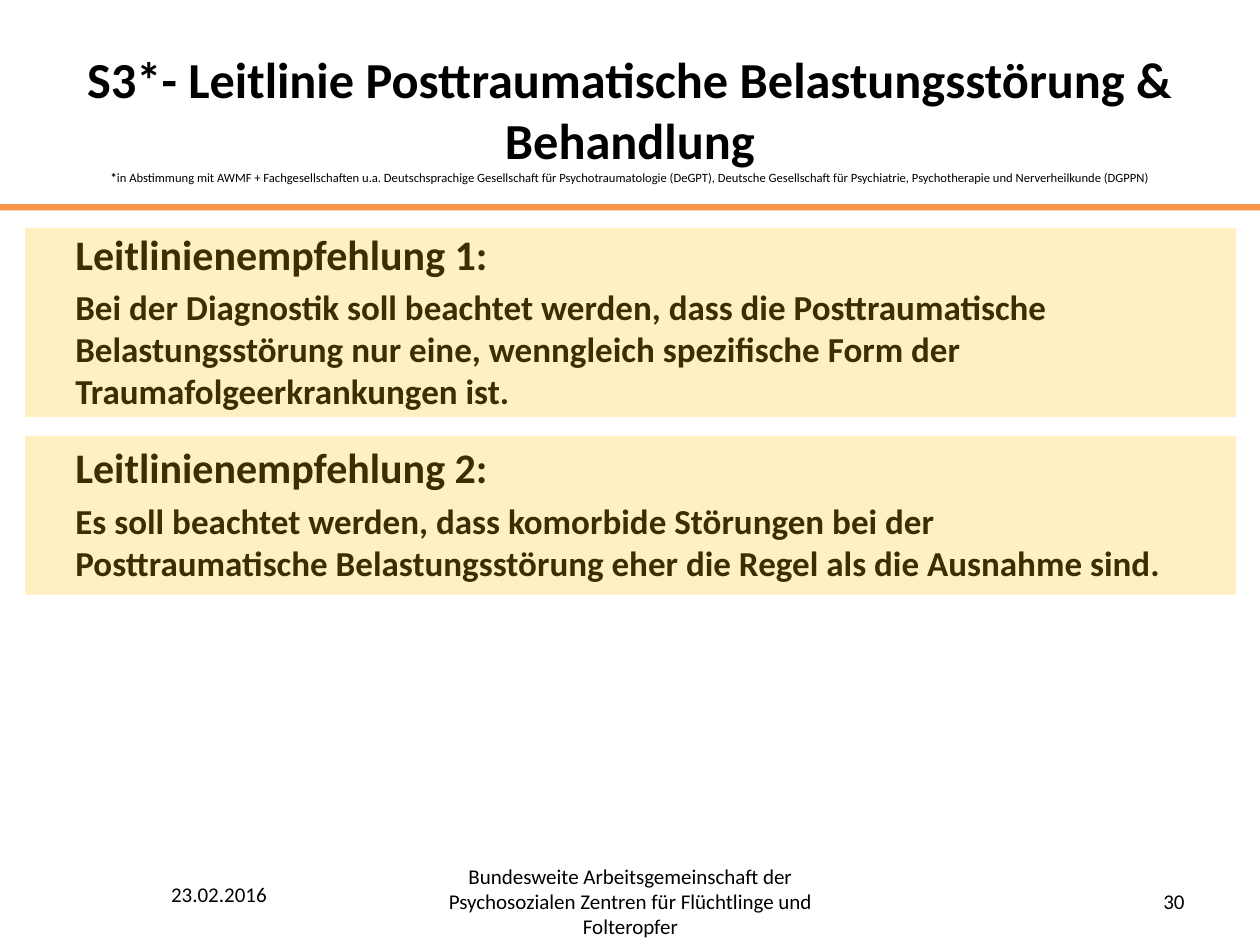
from lxml import etree
from pptx import Presentation
from pptx.dml.color import RGBColor
from pptx.enum.shapes import MSO_SHAPE
from pptx.enum.text import MSO_ANCHOR, MSO_AUTO_SIZE, PP_ALIGN
from pptx.oxml.ns import qn
from pptx.util import Pt

RECT = MSO_SHAPE.RECTANGLE
LEFT, CENTER, RIGHT = PP_ALIGN.LEFT, PP_ALIGN.CENTER, PP_ALIGN.RIGHT
TOP, MIDDLE = MSO_ANCHOR.TOP, MSO_ANCHOR.MIDDLE
NO_FIT = MSO_AUTO_SIZE.NONE

BLACK = RGBColor(0x00, 0x00, 0x00)
ORANGE = RGBColor(0xF7, 0x96, 0x46)
AMBER = RGBColor(0xFF, 0xC0, 0x00)
FONT = "Calibri"
TITLE_ONLY = 5

TITLE = "S3*- Leitlinie Posttraumatische Belastungsstörung & Behandlung"
NOTE = ("in Abstimmung mit AWMF + Fachgesellschaften u.a. Deutschsprachige "
        "Gesellschaft für Psychotraumatologie (DeGPT), Deutsche Gesellschaft "
        "für Psychiatrie, Psychotherapie und Nerverheilkunde (DGPPN)")
ADVICE = [
    ("Leitlinienempfehlung 1:",
     "Bei der Diagnostik soll beachtet werden, dass die Posttraumatische "
     "Belastungsstörung nur eine, wenngleich spezifische Form der "
     "Traumafolgeerkrankungen ist."),
    ("Leitlinienempfehlung 2:",
     "Es soll beachtet werden, dass komorbide Störungen bei der "
     "Posttraumatische Belastungsstörung eher die Regel als die Ausnahme sind."),
]
GROUP = ("Bundesweite Arbeitsgemeinschaft der Psychosozialen Zentren "
         "für Flüchtlinge und Folteropfer")


def write(para, text, size=12, bold=False, align=LEFT, before=0):
    """Add a run to the paragraph and format both."""
    para.alignment = align
    para.space_before = Pt(before)
    run = para.add_run()
    run.text = text
    font = run.font
    font.name, font.size, font.bold = FONT, Pt(size), bold
    font.color.rgb = BLACK


def add_rect(slide, left, top, width, height, color, alpha=None):
    """Add a plain rectangle; alpha is its opacity in percent."""
    rect = slide.shapes.add_shape(RECT, Pt(left), Pt(top), Pt(width), Pt(height))
    rect.shadow.inherit = False
    rect.line.fill.background()
    rect.fill.solid()
    rect.fill.fore_color.rgb = color
    if alpha is not None:
        tone = rect.fill._xPr.find(".//" + qn("a:srgbClr"))
        etree.SubElement(tone, qn("a:alpha"), val=str(alpha * 1000))


def add_box(slide, left, top, width, height, anchor=TOP):
    box = slide.shapes.add_textbox(Pt(left), Pt(top), Pt(width), Pt(height))
    frame = box.text_frame
    frame.word_wrap = True
    frame.vertical_anchor = anchor
    return frame


def set_title(slide):
    title = slide.shapes.title
    title.left, title.top = Pt(36), Pt(21.6)
    title.width, title.height = Pt(648), Pt(90)
    frame = title.text_frame
    frame.auto_size = NO_FIT
    frame.vertical_anchor = MIDDLE
    para = frame.paragraphs[0]
    write(para, TITLE, size=28.8, bold=True, align=CENTER)
    para.add_line_break()
    write(para, "*", size=7.2, bold=True, align=CENTER)
    write(para, NOTE, size=7.2, align=CENTER)


def add_advice(slide):
    frame = add_box(slide, 36, 127, 648, 355)
    para = frame.paragraphs[0]
    for i, (head, body) in enumerate(ADVICE):
        if i:
            para = frame.add_paragraph()
        write(para, head, size=24, bold=True, before=17 if i else 0)
        write(frame.add_paragraph(), body, size=20, bold=True, before=4)
    for top, height in ((130.3, 108), (249.1, 90.7)):
        add_rect(slide, 14.4, top, 691.9, height, AMBER, alpha=24)


def add_footer(slide):
    for text, left, width, align, anchor in (
        ("23.02.2016", 90.7, 127.4, LEFT, TOP),
        (GROUP, 246.2, 228.2, CENTER, MIDDLE),
        ("30", 516.2, 167.8, RIGHT, MIDDLE),
    ):
        frame = add_box(slide, left, 500.4, width, 28.8, anchor)
        write(frame.paragraphs[0], text, align=align)


def main():
    prs = Presentation()
    prs.slide_width, prs.slide_height = Pt(720), Pt(540)
    slide = prs.slides.add_slide(prs.slide_layouts[TITLE_ONLY])
    add_rect(slide, 0, 116.6, 720, 3.6, ORANGE)
    set_title(slide)
    add_advice(slide)
    add_footer(slide)
    prs.save("out.pptx")


if __name__ == "__main__":
    main()
